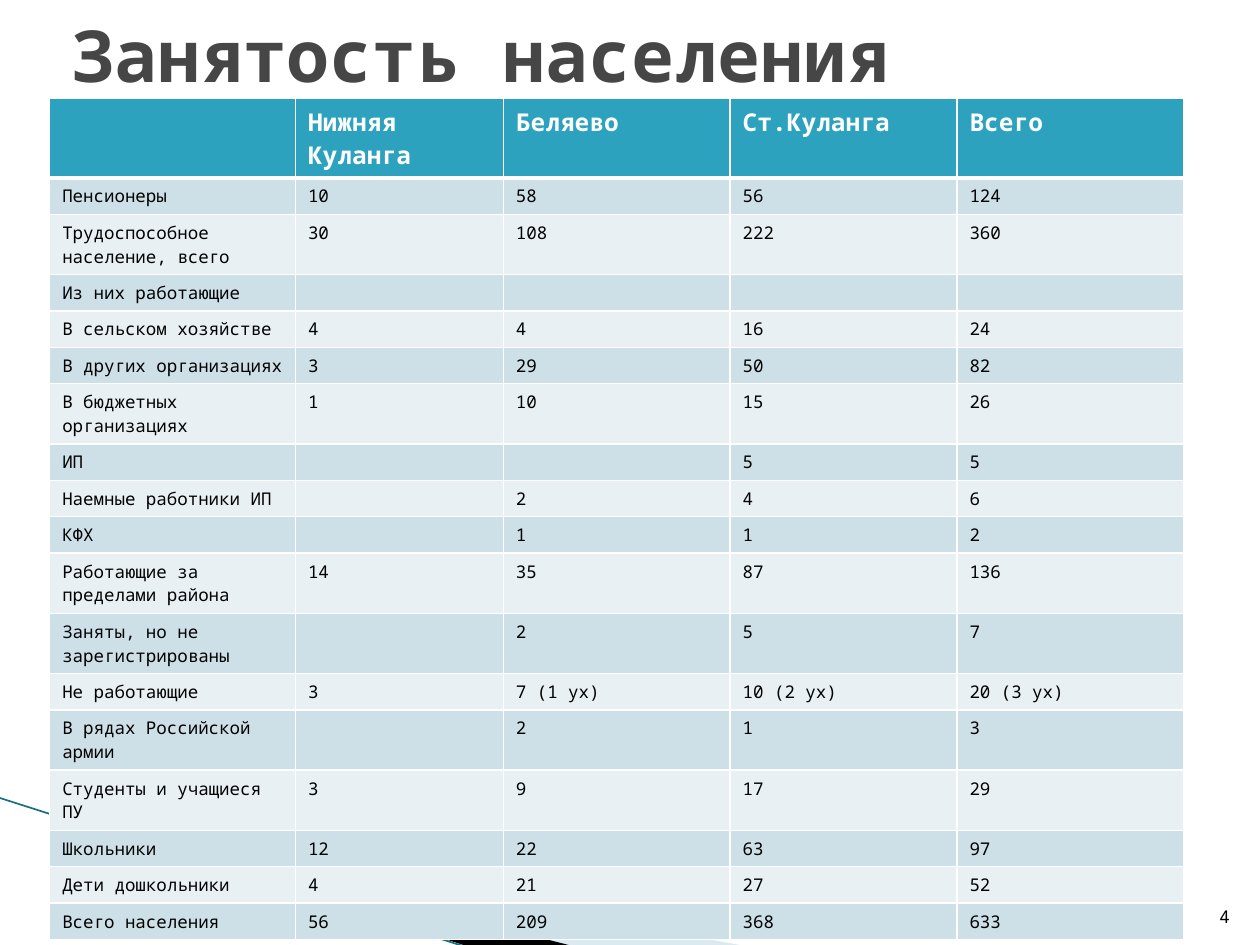
from lxml.etree import SubElement
from pptx import Presentation
from pptx.dml.color import RGBColor
from pptx.enum.text import MSO_ANCHOR, PP_ALIGN
from pptx.oxml.ns import qn
from pptx.util import Pt

WHITE = RGBColor(0xFF, 0xFF, 0xFF)
BLACK = RGBColor(0, 0, 0)
GREY = RGBColor(0x46, 0x46, 0x46)
HEADER = RGBColor(0x2D, 0xA2, 0xBF)
BANDS = [RGBColor(0xCD, 0xE0, 0xE8), RGBColor(0xE8, 0xF0, 0xF4)]
PALE = RGBColor(0xA0, 0xCB, 0xDC)
TEAL = RGBColor(0x17, 0x70, 0x82)

COLUMN_WIDTHS = [140.4, 118.8, 129.6, 129.6, 129.6]
HEADER_HEIGHT, ONE_LINE, TWO_LINES = 38.9, 18.7, 30.2
WRAP_AT = 21  # characters that fit on one line of the first column

ROWS = [
    ["", "Нижняя Куланга", "Беляево", "Ст.Куланга", "Всего"],
    ["Пенсионеры", "10", "58", "56", "124"],
    ["Трудоспособное население, всего", "30", "108", "222", "360"],
    ["Из них работающие", "", "", "", ""],
    ["В сельском хозяйстве", "4", "4", "16", "24"],
    ["В других организациях", "3", "29", "50", "82"],
    ["В бюджетных организациях", "1", "10", "15", "26"],
    ["ИП", "", "", "5", "5"],
    ["Наемные работники ИП", "", "2", "4", "6"],
    ["КФХ", "", "1", "1", "2"],
    ["Работающие за пределами района", "14", "35", "87", "136"],
    ["Заняты, но не зарегистрированы", "", "2", "5", "7"],
    ["Не работающие", "3", "7 (1 ух)", "10 (2 ух)", "20 (3 ух)"],
    ["В рядах Российской армии", "", "2", "1", "3"],
    ["Студенты и учащиеся ПУ", "3", "9", "17", "29"],
    ["Школьники", "12", "22", "63", "97"],
    ["Дети дошкольники", "4", "21", "27", "52"],
    ["Всего населения", "56", "209", "368", "633"],
]


class SlideBuilder:
    font_name = "Noto Sans Mono"

    def __init__(self, prs):
        self.s = prs.slides.add_slide(prs.slide_layouts[5])

    def set_text(self, tf, text, size, color, bold=False, align=PP_ALIGN.LEFT):
        p = tf.paragraphs[0]
        p.alignment = align
        if text:
            r = p.add_run()
            r.text = text
            font = r.font
        else:
            font = p.font
            # An empty cell takes its line height from the end mark
            SubElement(p._p, qn("a:endParaRPr"), sz=str(size * 100))
        for name, value in dict(name=self.font_name, size=Pt(size), bold=bold).items():
            setattr(font, name, value)
        font.color.rgb = color

    def title(self, text, left, top, width, height):
        sp = self.s.shapes.title
        box = dict(left=left, top=top, width=width, height=height)
        for name, value in box.items():
            setattr(sp, name, Pt(value))
        sp.text_frame.vertical_anchor = MSO_ANCHOR.MIDDLE
        self.set_text(sp.text_frame, text, 41, GREY, True)

    def text(self, text, left, top, width, height):
        sp = self.s.shapes.add_textbox(Pt(left), Pt(top), Pt(width), Pt(height))
        tf = sp.text_frame
        tf.word_wrap = True
        tf.vertical_anchor = MSO_ANCHOR.BOTTOM
        self.set_text(tf, text, 10, BLACK, align=PP_ALIGN.RIGHT)

    def polygon(self, points, color, alpha=None):
        builder = self.s.shapes.build_freeform(*points[0], scale=Pt(1))
        builder.add_line_segments(points[1:], close=True)
        sp = builder.convert_to_shape()
        sp.shadow.inherit = False
        sp.fill.solid()
        sp.fill.fore_color.rgb = color
        sp.line.fill.background()
        if alpha:
            clr = sp._element.spPr.find(qn("a:solidFill"))[0]
            SubElement(clr, qn("a:alpha"), val=str(alpha * 1000))

    def line(self, x1, y1, x2, y2, color, width):
        sp = self.s.shapes.add_connector(1, Pt(x1), Pt(y1), Pt(x2), Pt(y2))
        sp.line.color.rgb = color
        sp.line.width = Pt(width)
        SubElement(sp._element.spPr, qn("a:effectLst"))

    def borders(self, cell, **widths):
        tcPr = cell._tc.get_or_add_tcPr()
        for i, side in enumerate("LRTB"):
            ln = SubElement(tcPr, qn(f"a:ln{side}"), w=str(Pt(widths.get(side, 1))))
            fill = SubElement(ln, qn("a:solidFill"))
            SubElement(fill, qn("a:srgbClr"), val=str(WHITE))
            tcPr.insert(i, ln)

    def table(self, rows, left, top, widths, heights):
        frame = self.s.shapes.add_table(len(rows), len(widths), Pt(left), Pt(top),
                                        Pt(sum(widths)), Pt(sum(heights)))
        tbl = frame.table
        for col, width in zip(tbl.columns, widths):
            col.width = Pt(width)
        for i, (values, height) in enumerate(zip(rows, heights)):
            tbl.rows[i].height = Pt(height)
            for j, value in enumerate(values):
                cell = tbl.cell(i, j)
                cell.fill.solid()
                if i == 0:
                    cell.fill.fore_color.rgb = HEADER
                    self.set_text(cell.text_frame, value, 14, WHITE, True)
                    self.borders(cell, B=3)
                else:
                    cell.fill.fore_color.rgb = BANDS[(i - 1) % 2]
                    self.set_text(cell.text_frame, value, 10, BLACK)
                    self.borders(cell, T=3 if i == 1 else 1)


def main():
    prs = Presentation()
    prs.slide_width, prs.slide_height = Pt(720), Pt(540)
    b = SlideBuilder(prs)

    # Background swoosh
    b.polygon([(39.6, 468.7), (428.4, 540.7), (328.3, 540.7), (39.6, 468)], PALE, 40)
    b.polygon([(38.2, 467.3), (329, 540.7), (267.8, 541.4), (38.9, 468)], BLACK)
    b.line(-0.7, 455.8, 267.1, 541.4, TEAL, 0.95)

    # Employment table
    heights = [HEADER_HEIGHT] + [
        TWO_LINES if len(row[0]) > WRAP_AT else ONE_LINE for row in ROWS[1:]]
    b.table(ROWS, 28.4, 56.3, COLUMN_WIDTHS, heights)

    # Slide number and title
    b.text("4", 681.1, 504.7, 28.8, 28.8)
    b.title("Занятость населения", 33.8, 0, 648, 61.9)

    prs.save("out.pptx")


if __name__ == "__main__":
    main()
